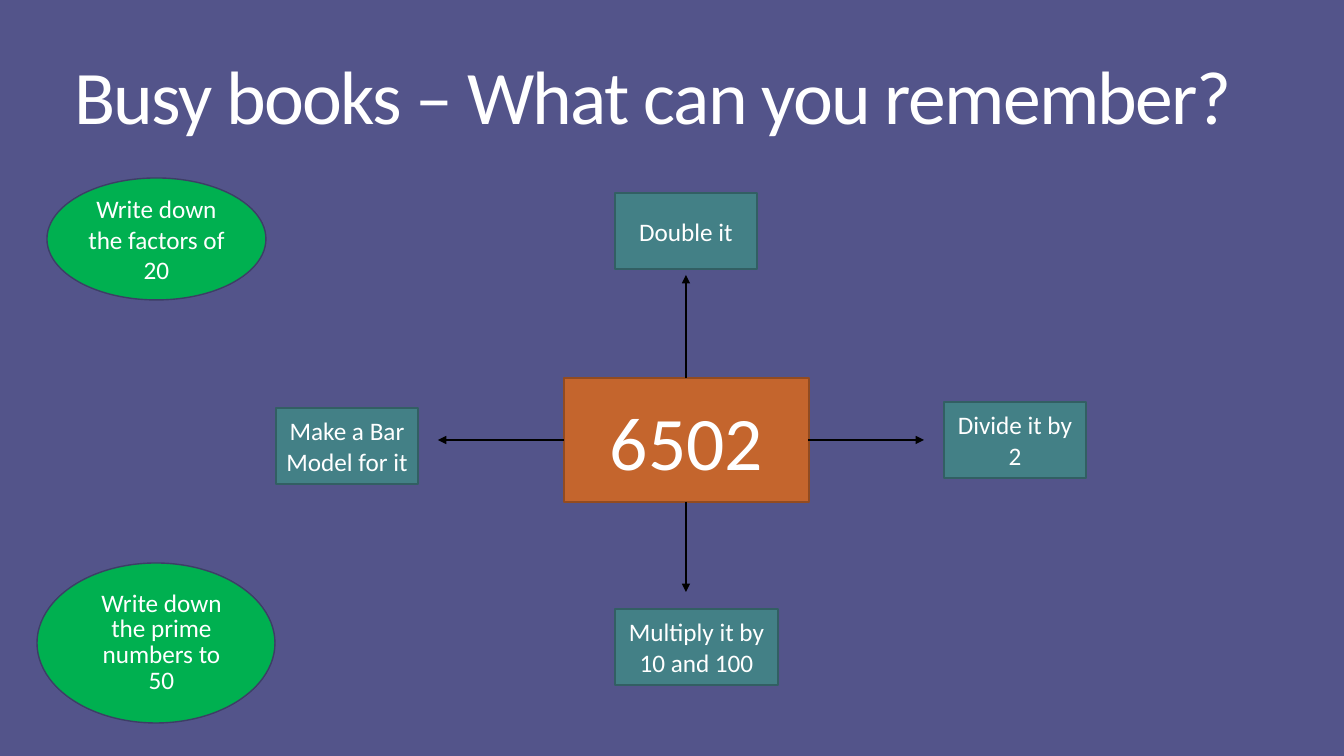
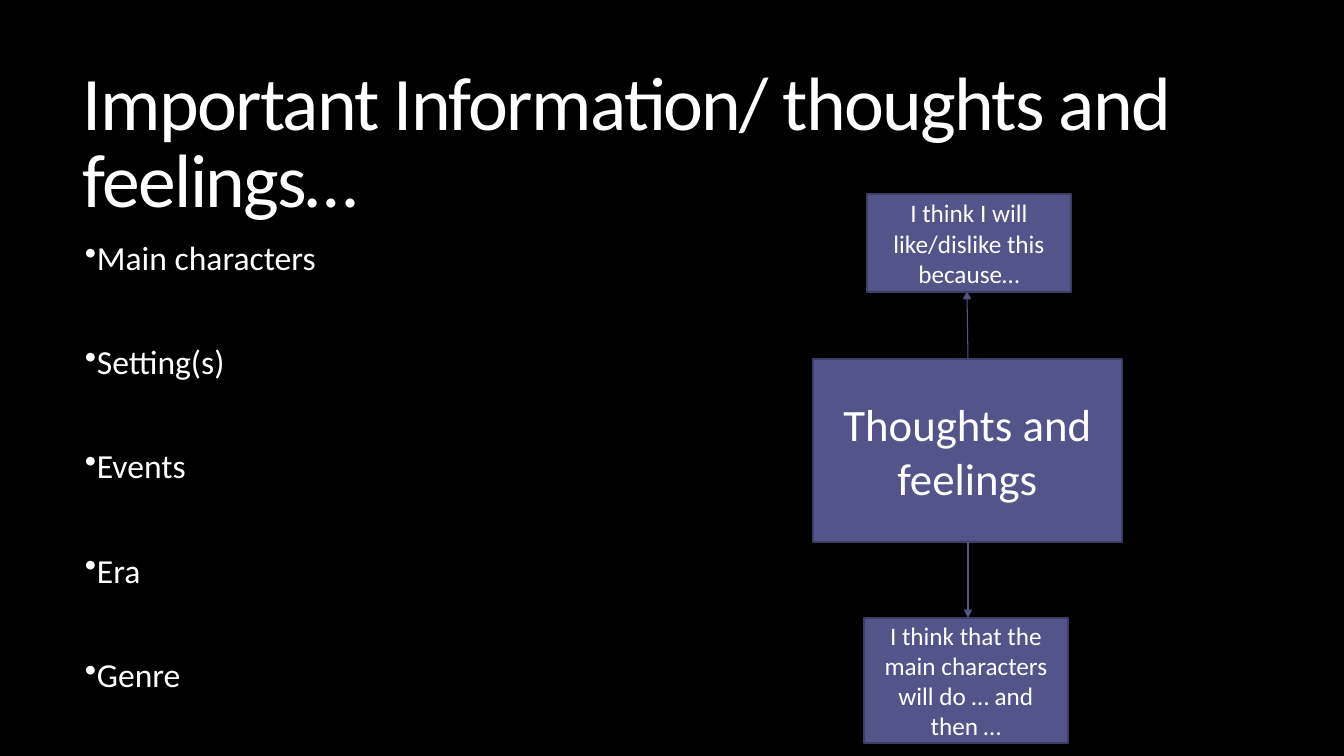
import pptx
import pptx.dml.color
import pptx.enum.shapes
import pptx.enum.text
import pptx.oxml
import pptx.oxml.ns
import pptx.util

EMU = 914400 / 100.8
FONT = "Calibri"
WHITE, BLACK = "FFFFFF", "000000"
PURPLE, NAVY = "53548A", "3D3E66"
TEAL, PINE = "438086", "325F63"
RUST, BROWN = "C4652D", "914B21"
GREEN = "00B050"
TIGHT = 0.85
RECT = pptx.enum.shapes.MSO_SHAPE.RECTANGLE
OVAL = pptx.enum.shapes.MSO_SHAPE.OVAL
LEFT = pptx.enum.text.PP_ALIGN.LEFT
CENTER = pptx.enum.text.PP_ALIGN.CENTER
MIDDLE = pptx.enum.text.MSO_ANCHOR.MIDDLE
TOP = pptx.enum.text.MSO_ANCHOR.TOP


def px(n):
    return pptx.util.Emu(round(n * EMU))


def rgb(code):
    return pptx.dml.color.RGBColor.from_string(code)


def apply(obj, **vals):
    for name, val in vals.items():
        setattr(obj, name, val)


def place(shape, box):
    apply(shape, **dict(zip(("left", "top", "width", "height"), map(px, box))))


def write(shape, lines, size, align=CENTER, anchor=MIDDLE, space=1.0,
          after=0, inset=10):
    """Fill a shape with paragraphs in one style."""
    frame = shape.text_frame
    frame.text = "\n".join(lines)
    apply(frame, word_wrap=True, vertical_anchor=anchor,
          auto_size=pptx.enum.text.MSO_AUTO_SIZE.NONE,
          margin_left=px(inset), margin_right=px(inset),
          margin_top=px(5), margin_bottom=px(5))
    for para in frame.paragraphs:
        apply(para, alignment=align, line_spacing=space,
              space_before=pptx.util.Pt(0), space_after=pptx.util.Pt(after))
        font = para.runs[0].font
        apply(font, name=FONT, size=pptx.util.Pt(size))
        font.color.rgb = rgb(WHITE)


def start(deck, back, title, box):
    """Add a slide with its background and title."""
    slide = deck.slides.add_slide(deck.slide_layouts[5])
    fill = slide.background.fill
    fill.solid()
    fill.fore_color.rgb = rgb(back)
    head = slide.shapes.title
    place(head, box)
    write(head, [title], 54, LEFT, space=TIGHT)
    run = head.text_frame.paragraphs[0].runs[0]
    run.font._element.set("spc", "-120")
    return slide


def block(slide, text, box, fill, edge, size=18, kind=RECT, space=1.0):
    shape = slide.shapes.add_shape(kind, *map(px, box))
    shape.shadow.inherit = False
    shape.fill.solid()
    shape.fill.fore_color.rgb = rgb(fill)
    shape.line.color.rgb = rgb(edge)
    shape.line.width = pptx.util.Pt(1)
    write(shape, [text], size, space=space, inset=9)
    return shape


def arrow(slide, ends, color):
    line = slide.shapes.add_connector(
        pptx.enum.shapes.MSO_CONNECTOR.STRAIGHT, *map(px, ends))
    line.line.color.rgb = rgb(color)
    line.line.width = pptx.util.Pt(0.75)
    props = line._element.spPr
    tip = pptx.oxml.parse_xml(
        f'<a:tailEnd {pptx.oxml.ns.nsdecls("a")} type="triangle"/>')
    props.find(pptx.oxml.ns.qn("a:ln")).append(tip)
    props.append(pptx.oxml.parse_xml(
        f'<a:effectLst {pptx.oxml.ns.nsdecls("a")}/>'))


def bullets(slide, items, box):
    shape = slide.shapes.add_textbox(*map(px, box))
    write(shape, items, 24, LEFT, TOP, TIGHT, after=50)
    for para in shape.text_frame.paragraphs:
        props = para._p.get_or_add_pPr()
        props.set("marL", str(px(10)))
        props.set("indent", str(-px(10)))
        props.append(pptx.oxml.parse_xml(
            f'<a:buChar {pptx.oxml.ns.nsdecls("a")} char="•"/>'))


def maths(deck):
    slide = start(deck, PURPLE, "Busy books – What can you remember?",
                  (64, 10, 1187, 182))
    block(slide, "6502", (564, 378, 245, 124), RUST, BROWN, 54)
    for ends in ((686, 378, 686, 275), (808, 440, 924, 440),
                 (686, 502, 686, 592), (564, 440, 438, 440)):
        arrow(slide, ends, BLACK)
    for text, left, top, width in (
            ("Double it", 615, 193, 142),
            ("Make a Bar Model for it", 276, 408, 142),
            ("Divide it by 2", 944, 402, 142),
            ("Multiply it by 10 and 100", 615, 609, 163)):
        block(slide, text, (left, top, width, 76), TEAL, PINE)
    block(slide, "Write down the factors of 20", (47, 178, 219, 122),
          GREEN, NAVY, kind=OVAL)
    primes = block(slide, "Write down the prime numbers to 50",
                   (37, 563, 238, 160), GREEN, NAVY, kind=OVAL, space=TIGHT)
    primes.text_frame.margin_left = px(20)


def story(deck):
    slide = start(deck, BLACK, "Important Information/ thoughts and feelings…",
                  (73, 55, 1187, 182))
    bullets(slide, ["Main characters", "Setting(s)", "Events", "Era", "Genre"],
            (75, 238, 1185, 488))
    block(slide, "Thoughts and feelings", (813, 359, 309, 183),
          PURPLE, NAVY, 32)
    for ends in ((968, 359, 967, 291), (968, 542, 968, 618)):
        arrow(slide, ends, PURPLE)
    for text, box in (
            ("I think I will like/dislike this because…", (867, 194, 204, 98)),
            ("I think that the main characters will do … and then …",
             (864, 618, 204, 125))):
        block(slide, text, box, PURPLE, NAVY)


def main():
    deck = pptx.Presentation()
    apply(deck, slide_width=px(1344), slide_height=px(756))
    maths(deck)
    story(deck)
    deck.save("out.pptx")


if __name__ == "__main__":
    main()
